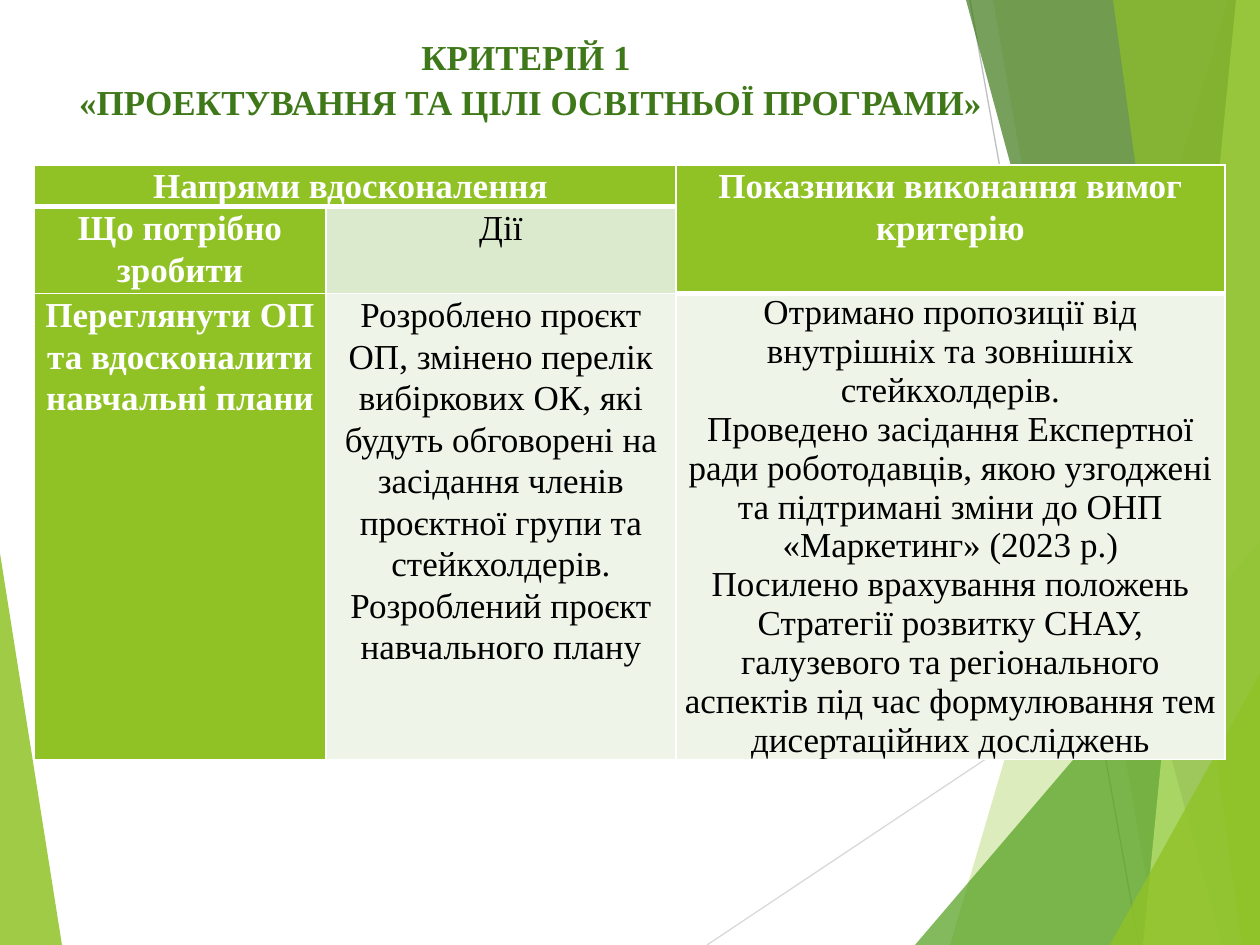
from collections import namedtuple
from lxml.etree import SubElement as sub
from pptx import Presentation
from pptx.dml.color import RGBColor as RGB
from pptx.enum.shapes import MSO_CONNECTOR as Conn
from pptx.enum.text import MSO_ANCHOR as Anchor, MSO_AUTO_SIZE as Auto, PP_ALIGN as Align
from pptx.oxml import parse_xml
from pptx.oxml.ns import nsdecls, qn
from pptx.util import Pt

Theme = namedtuple("Theme", "font size lime green dark pale tint mist white black rule edge")
THEME = Theme("Times New Roman", 20, "90C226", "54A021", "3F7819", "C0E474",
              "DBE9CD", "EEF4E8", "FFFFFF", "000000", "D9D9D9", "BFBFBF")
W, H = 1260, 945
SCALE = 914400 / 126
LEAD = 1.07

TITLE = "КРИТЕРІЙ 1 \n«ПРОЕКТУВАННЯ ТА ЦІЛІ ОСВІТНЬОЇ ПРОГРАМИ»"
COLS = (292, 350, 549)
ROWS = (40, 87, 389)
HEAD = (THEME.lime, THEME.white, True)
SUB = (THEME.tint, THEME.black, False)
BODY = (THEME.mist, THEME.black, False)
CELLS = [
    (0, 0, HEAD, "Напрями вдосконалення "),
    (0, 2, HEAD, "Показники виконання вимог критерію"),
    (1, 0, HEAD, "Що потрібно зробити"),
    (1, 1, SUB, "Дії"),
    (2, 0, HEAD, "Переглянути ОП та вдосконалити навчальні плани"),
    (2, 1, BODY, "Розроблено проєкт ОП, змінено перелік вибіркових ОК, які будуть "
                 "обговорені на засідання членів проєктної групи та стейкхолдерів. "
                 "Розроблений проєкт навчального плану"),
    (2, 2, BODY, "Отримано пропозиції від внутрішніх та зовнішніх стейкхолдерів.\n"
                 "Проведено засідання Експертної ради роботодавців, якою узгоджені "
                 "та підтримані зміни до ОНП «Маркетинг» (2023 р.)\n"
                 "Посилено врахування положень Стратегії розвитку СНАУ, галузевого та "
                 "регіонального аспектів під час формулювання тем дисертаційних досліджень"),
]
MERGES = [((0, 0), (0, 1)), ((0, 2), (1, 2))]

LINES = [((707, H), (W, 576), THEME.rule), ((970, 0), (1139, H), THEME.edge)]


def band(top, low):
    return [(top, 0), (low, H), (W, H), (W, 0)]


def wedge(left, top):
    return [(left, H), (W, top), (W, H)]


FACETS = [
    ([(0, 553), (62, H), (0, H)], THEME.lime, 85),
    (band(1228, 950), THEME.lime, 30),
    (band(993, 1158), THEME.lime, 20),
    (wedge(915, 541), THEME.green, 72),
    (band(966, 1222), THEME.dark, 70),
    (band(1236, 1143), THEME.pale, 70),
    (band(1113, 1242), THEME.lime, 65),
    (wedge(1110, 674), THEME.lime, 80),
]


def px(num):
    return round(num * SCALE)


def paint(fill, color):
    fill.solid()
    fill.fore_color.rgb = RGB.from_string(color)


def style(para, color, bold):
    para.alignment = Align.CENTER
    for run in para.runs:
        font = run.font
        font.name, font.size, font.bold = THEME.font, Pt(THEME.size), bold
        font.color.rgb = RGB.from_string(color)


def add_line(shapes, start, end, color):
    line = shapes.add_connector(Conn.STRAIGHT, *map(px, start + end))
    line.line.color.rgb = RGB.from_string(color)
    line.line.width = Pt(0.75)
    sub(line._element.spPr, qn("a:effectLst"))


def add_facet(shapes, points, color, alpha):
    pen = shapes.build_freeform(*points[0], scale=SCALE)
    pen.add_line_segments(points[1:], close=True)
    facet = pen.convert_to_shape()
    paint(facet.fill, color)
    facet.line.fill.background()
    facet.shadow.inherit = False
    tone = facet._element.spPr.find(qn("a:solidFill"))[0]
    sub(tone, qn("a:alpha"), val=str(alpha * 1000))


def add_edges(cell, top, low):
    props = cell._tc.get_or_add_tcPr()
    for spot, (side, wide) in enumerate((("L", 1), ("R", 1), ("T", top), ("B", low))):
        props.insert(spot, parse_xml(
            f'<a:ln{side} {nsdecls("a")} w="{Pt(wide)}"><a:solidFill>'
            f'<a:srgbClr val="{THEME.white}"/></a:solidFill></a:ln{side}>'))


def add_grid(shapes):
    grid = shapes.add_table(len(ROWS), len(COLS), px(34), px(165),
                            px(sum(COLS)), px(sum(ROWS))).table
    grid.first_row = grid.horz_banding = False
    for col, wide in zip(grid.columns, COLS):
        col.width = px(wide)
    for row, tall in zip(grid.rows, ROWS):
        row.height = px(tall)
    for first, last in MERGES:
        grid.cell(*first).merge(grid.cell(*last))
    for row, col, (back, ink, bold), text in CELLS:
        cell = grid.cell(row, col)
        cell.margin_left = cell.margin_right = px(6)
        cell.margin_top = cell.margin_bottom = 0
        cell.text_frame.text = text
        paint(cell.fill, back)
        paras = cell.text_frame.paragraphs
        for para in paras:
            style(para, ink, bold)
            if len(paras) == 1:
                para.line_spacing, para.space_after = LEAD, Pt(8)
    heads = {(0, 0), (0, 1), (0, 2), (1, 2)}
    for row in range(len(ROWS)):
        for col in range(len(COLS)):
            top = 3 if row and (row - 1, col) in heads else 1
            low = 3 if (row, col) in heads else 1
            add_edges(grid.cell(row, col), top, low)


def set_title(shapes):
    title = shapes.title
    title.left, title.top, title.width, title.height = map(px, (54, 26, 953, 97))
    frame = title.text_frame
    frame.text = TITLE
    frame.word_wrap, frame.auto_size = True, Auto.NONE
    frame.vertical_anchor = Anchor.TOP
    for para in frame.paragraphs:
        style(para, THEME.dark, True)
        para.line_spacing = LEAD
    shapes._spTree.append(title._element)


def main():
    deck = Presentation()
    deck.slide_width, deck.slide_height = px(W), px(H)
    shapes = deck.slides.add_slide(deck.slide_layouts[5]).shapes
    add_facet(shapes, *FACETS[0])
    for line in LINES:
        add_line(shapes, *line)
    for facet in FACETS[1:]:
        add_facet(shapes, *facet)
    add_grid(shapes)
    set_title(shapes)
    deck.save("out.pptx")


if __name__ == "__main__":
    main()
